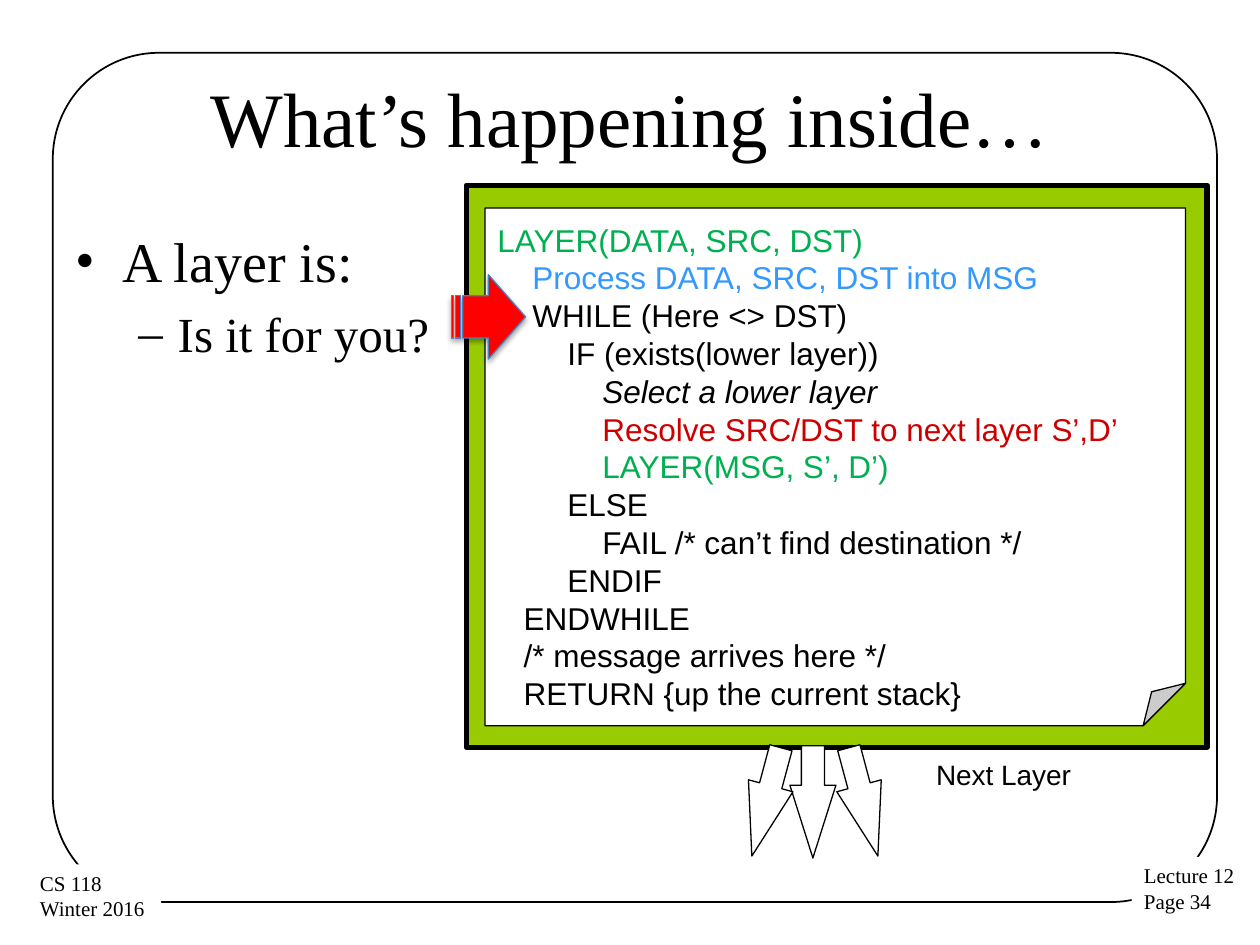
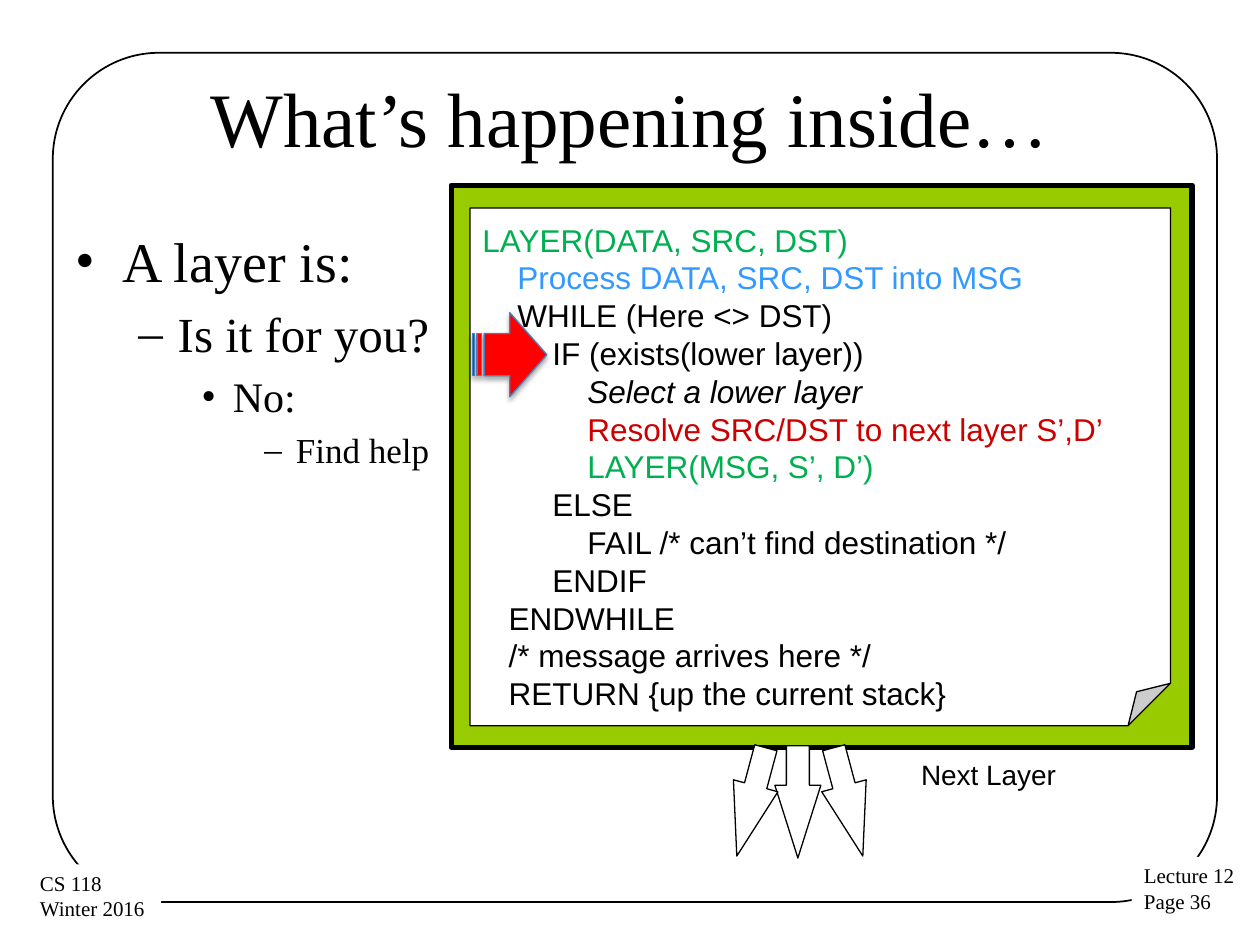
from pptx import Presentation
from pptx.dml.color import RGBColor
from pptx.enum.shapes import MSO_SHAPE
from pptx.enum.text import MSO_ANCHOR, PP_ALIGN
from pptx.util import Pt
from lxml.etree import SubElement
from pptx.oxml.ns import qn

SERIF, SANS = "Times New Roman", "Arial"
BLACK, WHITE, LIME, RED = "000000", "FFFFFF", "99CC00", "FF0000"
GREEN, BLUE, WINE, STEEL = "00B050", "3399FF", "CC0000", "4B7EBC"

CODE = [
    (0, "LAYER(DATA, SRC, DST)", GREEN),
    (20, "Process DATA, SRC, DST into MSG", BLUE),
    (20, "WHILE (Here <> DST)", BLACK),
    (40, "IF (exists(lower layer))", BLACK),
    (60, "Select a lower layer", BLACK),
    (60, "Resolve SRC/DST to next layer S’,D’", WINE),
    (60, "LAYER(MSG, S’, D’)", GREEN),
    (40, "ELSE", BLACK),
    (60, "FAIL /* can’t find destination */", BLACK),
    (40, "ENDIF", BLACK),
    (15, "ENDWHILE", BLACK),
    (15, "/* message arrives here */", BLACK),
    (15, "RETURN {up the current stack}", BLACK),
]
LEVELS = [(32, 27, 27, "•"), (28, 58.5, 22.5, "–"), (24, 90, 18, "•"), (20, 126, 18, "–")]
ARROWS = [(174.2, 0), (147.6, 15), (203, -15)]
SLIDES = [
    ("34", 277.2, (257.8, 157), ["A layer is:", "Is it for you?"]),
    ("36", 268.6, (270, 178.6), ["A layer is:", "Is it for you?", "No:", "Find help"]),
]


def draw(kind, x, y, w, h, fill, line, thick):
    shape = slide.shapes.add_shape(kind, Pt(x), Pt(y), Pt(w), Pt(h))
    shape.shadow.inherit = False
    if fill:
        shape.fill.solid()
        shape.fill.fore_color.rgb = RGBColor.from_string(fill)
    else:
        shape.fill.background()
    shape.line.color.rgb = RGBColor.from_string(line)
    shape.line.width = Pt(thick)
    return shape


def write(frame, lines, font, size, color=BLACK, align=PP_ALIGN.LEFT):
    for i, text in enumerate(lines):
        para = frame.paragraphs[0] if i == 0 else frame.add_paragraph()
        para.alignment = align
        run = para.add_run()
        run.text = text
        for name, value in {"name": font, "size": Pt(size)}.items():
            setattr(run.font, name, value)
        run.font.color.rgb = RGBColor.from_string(color)
    return frame.paragraphs


deck = Presentation()
deck.slide_width, deck.slide_height = Pt(720), Pt(540)

for page, left, mark, points in SLIDES:
    slide = deck.slides.add_slide(deck.slide_layouts[5])
    border = draw(MSO_SHAPE.ROUNDED_RECTANGLE, 30.2, 30.2, 665.3, 485.3, None, BLACK, 1)
    border.adjustments[0] = 0.125

    for x, y, w, lines in [
        (646.6, 489.6, 67, ["Lecture 12", f"Page {page}"]),
        (15.8, 493.9, 76.3, ["CS 118", "Winter 2016"]),
    ]:
        note = slide.shapes.add_textbox(Pt(x), Pt(y), Pt(w), Pt(36.7))
        note.fill.solid()
        note.fill.fore_color.rgb = RGBColor.from_string(WHITE)
        note.text_frame.word_wrap = False
        write(note.text_frame, lines, SERIF, 12)

    title = slide.shapes.title
    place = {"left": 36, "top": 21.6, "width": 648, "height": 90}
    for name, value in place.items():
        setattr(title, name, Pt(value))
    title.text_frame.vertical_anchor = MSO_ANCHOR.MIDDLE
    write(title.text_frame, ["What’s happening inside…"], SERIF, 44, align=PP_ALIGN.CENTER)

    body = slide.shapes.add_textbox(Pt(36), Pt(126), Pt(648), Pt(356.4))
    body.text_frame.word_wrap = True
    paras = write(body.text_frame, points, SERIF, 32)
    for depth, (para, (size, edge, hang, sign)) in enumerate(zip(paras, LEVELS)):
        para.level = depth
        para.runs[0].font.size = Pt(size)
        props = para._p.get_or_add_pPr()
        props.set("marL", str(Pt(edge)))
        props.set("indent", str(-Pt(hang)))
        SubElement(SubElement(props, qn("a:spcBef")), qn("a:spcPct"), val="20000")
        SubElement(props, qn("a:buFont"), typeface=SERIF)
        SubElement(props, qn("a:buChar"), char=sign)

    draw(MSO_SHAPE.RECTANGLE, left - 10.8, 105.9, 423.4, 321.1, LIME, BLACK, 3)
    for shift, turn in ARROWS:
        arrow = draw(MSO_SHAPE.DOWN_ARROW, left + shift, 426.2, 26.3, 64.1, WHITE, BLACK, 0.75)
        arrow.adjustments[1] = 1.58
        arrow.rotation = turn

    label = slide.shapes.add_textbox(Pt(left + 208.8), Pt(429.1), Pt(175), Pt(62.6))
    label.text_frame.word_wrap = True
    write(label.text_frame, ["Next Layer"], SANS, 16, align=PP_ALIGN.CENTER)

    sheet = draw(MSO_SHAPE.FOLDED_CORNER, left, 118.8, 400.3, 295.9, WHITE, BLACK, 0.75)
    form = sheet._element.spPr.find(qn("a:prstGeom"))
    form.set("prst", "foldedCorner")
    SubElement(form.find(qn("a:avLst")), qn("a:gd"), name="adj", fmla="val 8200")
    frame = sheet.text_frame
    frame.word_wrap = True
    frame.vertical_anchor = MSO_ANCHOR.TOP
    for side in ("left", "top", "right", "bottom"):
        setattr(frame, f"margin_{side}", Pt(7.2))
    paras = write(frame, [text for _, text, _ in CODE], SANS, 18)
    for para, (inset, text, color) in zip(paras, CODE):
        para.line_spacing = Pt(21.6)
        para._p.get_or_add_pPr().set("marL", str(Pt(inset)))
        font = para.runs[0].font
        font.color.rgb = RGBColor.from_string(color)
        font.italic = text.startswith("Select")

    here = draw(MSO_SHAPE.STRIPED_RIGHT_ARROW, *mark, 42.5, 48.2, RED, STEEL, 0.75)
    glow = here._element.spPr.find(qn("a:effectLst"))
    shade = SubElement(glow, qn("a:outerShdw"), blurRad=str(Pt(3.1)), dist=str(Pt(1.8)),
                       dir="5400000", rotWithShape="0")
    tint = SubElement(shade, qn("a:srgbClr"), val=BLACK)
    SubElement(tint, qn("a:alpha"), val="35000")

deck.save("out.pptx")
